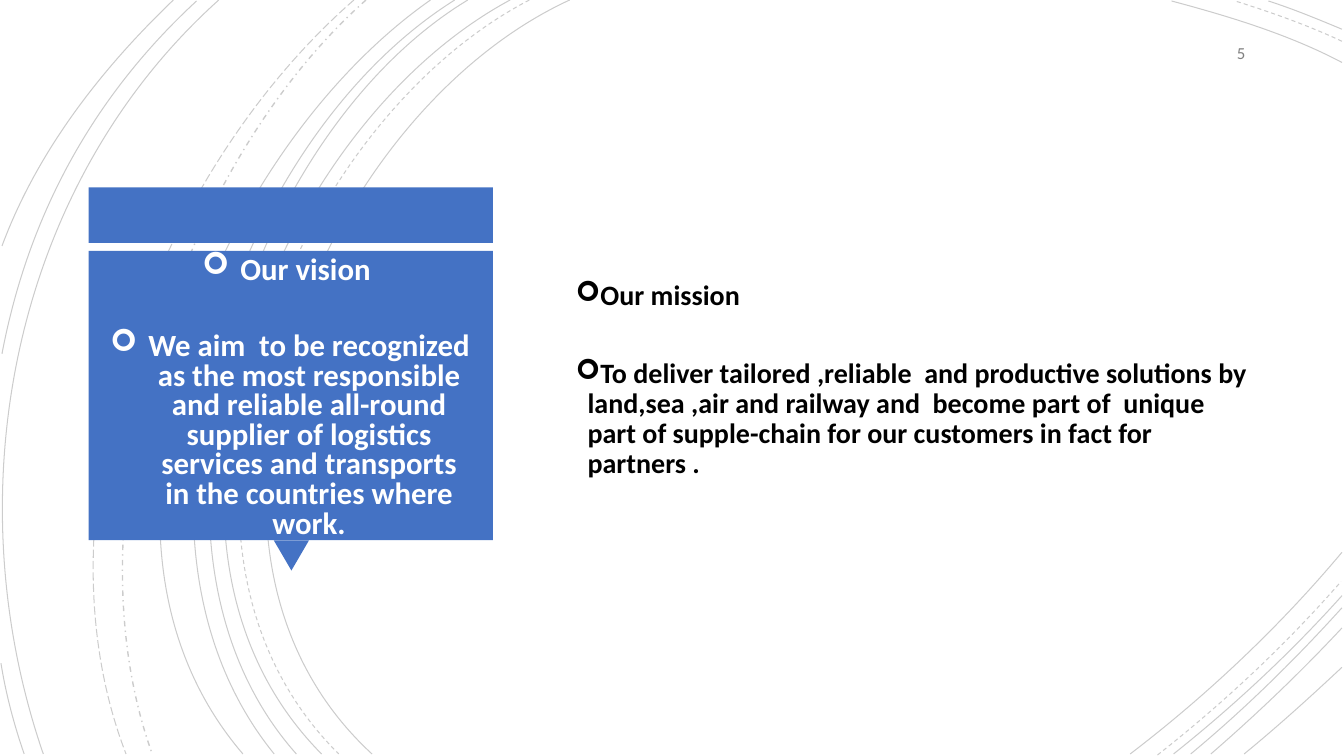
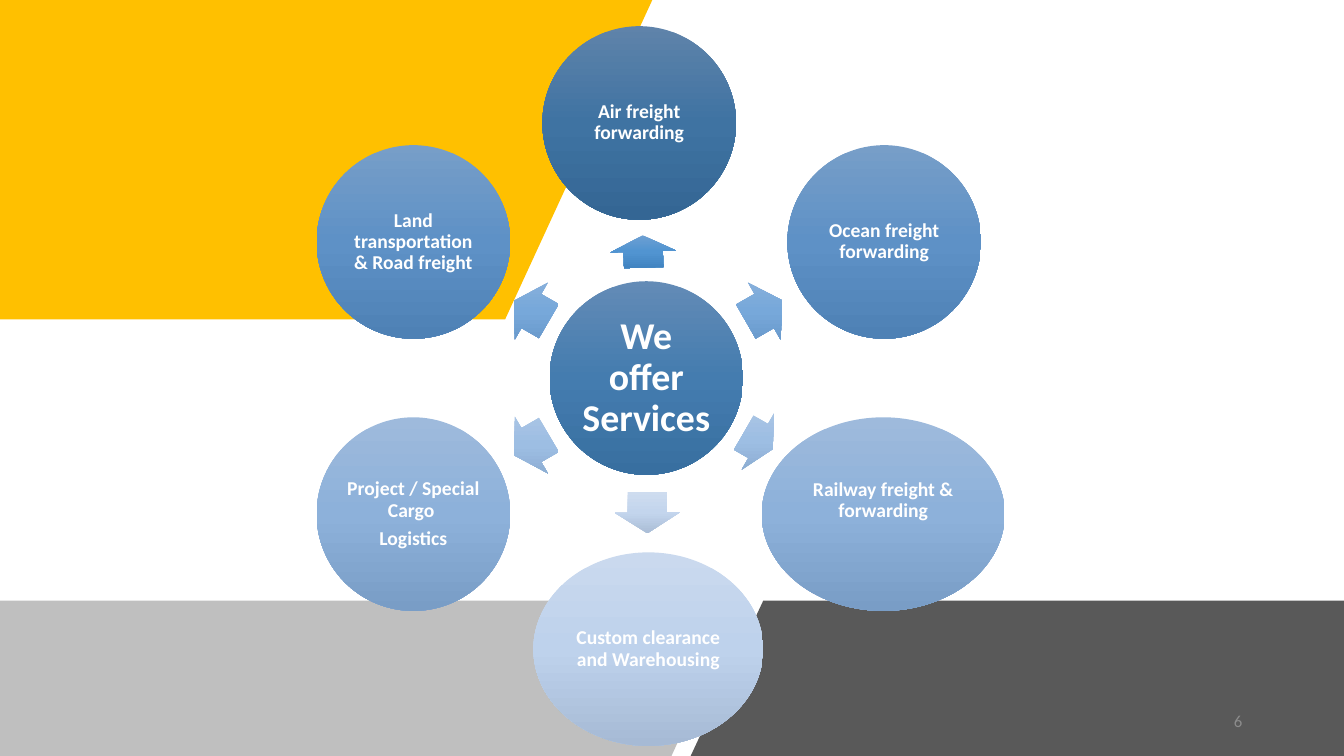
from pptx import Presentation
from pptx import util as u
from pptx.dml.color import RGBColor
from pptx.enum import dml, shapes, text
from pptx.oxml import parse_xml
from pptx.oxml.ns import qn
from lxml import etree

PX = 9144
W, H = 1333, 750
FONT = "Calibri"
BULLET_FONT = "Wingdings"
BLACK = RGBColor(0x00, 0x00, 0x00)
WHITE = RGBColor(0xFF, 0xFF, 0xFF)
GRAY = RGBColor(0x80, 0x80, 0x80)
LIGHT_GRAY = RGBColor(0x8C, 0x8C, 0x8C)
DARK_GRAY = RGBColor(0x59, 0x59, 0x59)
BLUE = RGBColor(0x44, 0x72, 0xC4)
GOLD = RGBColor(0xFF, 0xC0, 0x00)

HUB_TONES = "638BB6", "447CAF", "386FA0"
AIR_TONES = "5F83AA", "3F73A2", "346694"
UPPER_TONES = "779EC8", "5E91C6", "4E81B5"
LOWER_TONES = "9EBADC", "8DB1DA", "799DC6"
CUSTOM_TONES = "CAD9EE", "BED2EC", "A6BAD5"
AIR_ARROW = "6EA0D2", "5194D1", "4184C1"
UPPER_ARROW = "8CB2DB", "77A8DA", "6595C7"
LOWER_ARROW = "ADC6E5", "9DBEE3", "88A8CE"
CUSTOM_ARROW = "CEDCEF", "C3D5ED", "AABDD6"

SOLID = dml.MSO_LINE.SOLID
DASH = dml.MSO_LINE.DASH
DASH_DOT = dml.MSO_LINE.DASH_DOT
LONG_DASH = dml.MSO_LINE.LONG_DASH
CENTER = text.PP_ALIGN.CENTER
RIGHT = text.PP_ALIGN.RIGHT

ARCS = [
    (SOLID, (565, 0), (315, 115), (143, 540), (369, 748)),
    (SOLID, (1331, 62), (1278, 34), (1218, 16), (1162, 1)),
    (SOLID, (1121, 748), (1197, 690), (1269, 622), (1331, 548)),
    (DASH, (525, 0), (285, 125), (123, 537), (336, 748)),
    (DASH, (1331, 41), (1297, 25), (1260, 12), (1225, 1)),
    (DASH, (1148, 749), (1213, 698), (1275, 640), (1330, 577)),
    (SOLID, (506, 0), (270, 127), (110, 537), (319, 748)),
    (SOLID, (1331, 29), (1307, 19), (1283, 9), (1258, 1)),
    (SOLID, (1164, 748), (1223, 701), (1280, 648), (1331, 591)),
    (SOLID, (464, 0), (244, 133), (110, 541), (294, 748)),
    (SOLID, (1181, 748), (1234, 704), (1284, 655), (1331, 603)),
    (SOLID, (451, 0), (231, 138), (97, 533), (272, 748)),
    (SOLID, (1201, 748), (1246, 709), (1290, 667), (1331, 623)),
    (SOLID, (427, 0), (217, 147), (53, 529), (241, 748)),
    (SOLID, (1234, 748), (1267, 721), (1299, 692), (1331, 662)),
    (DASH_DOT, (363, 0), (176, 166), (65, 509), (151, 748)),
    (LONG_DASH, (351, 0), (157, 169), (29, 499), (125, 748)),
    (SOLID, (217, 0), (11, 185), (-46, 490), (43, 748)),
    (SOLID, (195, 1), (92, 96), (28, 214), (2, 351)),
    (SOLID, (1, 658), (6, 689), (14, 719), (24, 748)),
    (SOLID, (172, 0), (100, 69), (37, 150), (2, 244)),
]

SERVICES = [
    ("Air freight forwarding", 634, 122, 192, AIR_TONES, 0),
    ("Ocean freight forwarding", 877, 240, 192, UPPER_TONES, 0),
    ("Railway freight & forwarding", 876, 510, 241, LOWER_TONES, 26),
    ("Custom clearance and Warehousing", 643, 644, 228, CUSTOM_TONES, 0),
    ("Project / Special Cargo \nLogistics", 410, 510, 192, LOWER_TONES, 0),
    ("Land transportation & Road freight", 410, 240, 192, UPPER_TONES, 0),
]
ARROWS = [
    (638, 249, 32, 268.3, AIR_ARROW),
    (758, 308, 42, 330.2, UPPER_ARROW),
    (752, 437, 33, 29.8, LOWER_ARROW),
    (642, 508, 41, 89.6, CUSTOM_ARROW),
    (527, 441, 40, 149.8, LOWER_ARROW),
    (527, 308, 40, 210.2, UPPER_ARROW),
]


def px(*values):
    return [u.Emu(round(v * PX)) for v in values]


def add_bullet(p, margin, hanging):
    pPr = p._p.get_or_add_pPr()
    pPr.set("marL", str(margin))
    pPr.set("indent", str(hanging))
    etree.SubElement(pPr, qn("a:buFont")).set("typeface", BULLET_FONT)
    etree.SubElement(pPr, qn("a:buChar")).set("char", "➢")


def write(tf, content, size=12, color=BLACK, bold=False, align=None, line=None,
          after=0, bullet=None, insets=(10, 5, 10, 5)):
    tf.word_wrap = True
    tf.vertical_anchor = text.MSO_ANCHOR.MIDDLE
    tf.margin_left, tf.margin_top, tf.margin_right, tf.margin_bottom = px(*insets)
    for i, words in enumerate(content.split("\n")):
        p = tf.add_paragraph() if i else tf.paragraphs[0]
        p.alignment = align
        p.line_spacing = line
        p.space_after = u.Pt(after)
        if bullet:
            add_bullet(p, *px(*bullet))
        r = p.add_run()
        r.text = words
        r.font.name = FONT
        r.font.size = u.Pt(size)
        r.font.bold = bold
        r.font.color.rgb = color


def add_text(s, box, content, **fmt):
    write(s.shapes.add_textbox(*px(*box)).text_frame, content, **fmt)


def set_alpha(sp, percent):
    for clr in sp._element.spPr.iter(qn("a:srgbClr")):
        etree.SubElement(clr, qn("a:alpha")).set("val", str(percent * 1000))


def add_block(s, kind, box, color=None, tones=None, rotation=0):
    sp = s.shapes.add_shape(kind, *px(*box))
    sp.shadow.inherit = False
    sp.line.fill.background()
    sp.rotation = rotation
    if tones:
        set_gradient(sp, tones)
    else:
        sp.fill.solid()
        sp.fill.fore_color.rgb = color
    return sp


def set_gradient(sp, tones):
    sp.fill.gradient()
    sp.fill.gradient_angle = 270
    grad = sp._element.spPr.find(qn("a:gradFill"))
    grad.set("rotWithShape", "0")
    stops = "".join(
        f'<a:gs pos="{i * 50000}"><a:srgbClr val="{tone}"/></a:gs>'
        for i, tone in enumerate(tones))
    grad.replace(grad.find(qn("a:gsLst")), parse_xml(
        '<a:gsLst xmlns:a="http://schemas.openxmlformats.org/drawingml/2006/main">'
        f"{stops}</a:gsLst>"))


def add_outline(s, points, close):
    start, *rest = [px(*point) for point in points]
    fb = s.shapes.build_freeform(*start, scale=1.0)
    fb.add_line_segments(rest, close=close)
    sp = fb.convert_to_shape()
    sp.shadow.inherit = False
    return sp


def add_panel(s, points, color, alpha=100):
    sp = add_outline(s, points, True)
    sp.line.fill.background()
    sp.fill.solid()
    sp.fill.fore_color.rgb = color
    if alpha < 100:
        set_alpha(sp, alpha)


def bend(sp):
    segments = list(sp._element.spPr.iter(qn("a:lnTo")))
    outline = segments[0].getparent()
    curve = etree.SubElement(outline, qn("a:cubicBezTo"))
    for segment in segments:
        curve.append(segment[0])
        outline.remove(segment)


def add_arc(s, x, y, dash, ends):
    sp = add_outline(s, [(x + ex, y + ey) for ex, ey in ends], False)
    bend(sp)
    sp.fill.background()
    sp.line.color.rgb = BLACK
    sp.line.width = u.Pt(1 if dash == DASH_DOT else 0.75)
    sp.line.dash_style = dash
    set_alpha(sp, 20)


def add_arcs(s, x, y):
    for dash, *ends in ARCS:
        add_arc(s, x, y, dash, ends)


def add_page_number(s, box, number, color):
    add_text(s, box, number, color=color, align=RIGHT)


def add_vision(s, x, y, w):
    rect = shapes.MSO_SHAPE.RECTANGLE
    add_block(s, rect, (x, y, w, 55), BLUE)
    add_block(s, shapes.MSO_SHAPE.ISOSCELES_TRIANGLE,
              (x + w / 2 - 17, y + 350, 35, 30), BLUE, rotation=180)
    add_block(s, rect, (x, y + 63, w, 287), BLUE)
    add_text(s, (x + 11, y + 78, w - 24, 262),
             "Our vision \nWe aim  to be recognized as the most responsible and reliable "
             "all-round supplier of logistics services and transports in the countries "
             "where work.",
             size=22, color=WHITE, bold=True, align=CENTER, line=0.8, after=33.5,
             bullet=(38, -38))


def add_mission(s, box):
    add_text(s, box,
             "Our mission\nTo deliver tailored ,reliable  and productive solutions by "
             "land,sea ,air and railway and  become part of  unique part of supple-chain "
             "for our customers in fact for partners .",
             size=20, bold=True, line=0.9, after=34, bullet=(12, -38))


def add_panels(s, x, y, w, h):
    right, bottom, band = x + w, y + h, y + 596
    add_panel(s, [(x, band), (x + 737, band), (x + 666, bottom), (x, bottom)], GRAY, 50)
    add_panel(s, [(x + 832, y + 395), (x + 1162, y + 395), (x + 1162, bottom),
                  (x + 667, bottom)], WHITE)
    add_panel(s, [(x, y), (x + 647, y), (x + 501, y + 317), (x, y + 317)], GOLD)
    add_panel(s, [(x + 757, band), (right, band), (right, bottom), (x + 685, bottom)],
              DARK_GRAY)


def add_circle(s, label, cx, cy, w, tones, size=14, inset=2, lift=0, h=192):
    sp = add_block(s, shapes.MSO_SHAPE.OVAL, (cx - w / 2, cy - h / 2, w, h), tones=tones)
    write(sp.text_frame, label, size=size, color=WHITE, bold=True, align=CENTER,
          line=0.9, after=size * 0.35, insets=(inset, inset, inset, inset + lift))


def add_services(s, x, y):
    add_circle(s, "We offer Services", x + 641, y + 375, 192, HUB_TONES, size=27, inset=4)
    for cx, cy, w, rotation, tones in ARROWS:
        sp = add_block(s, shapes.MSO_SHAPE.RIGHT_ARROW,
                       (x + cx - w / 2, y + cy - 32, w, 65), tones=tones,
                       rotation=rotation)
        sp.adjustments[0] = 0.6
        sp.adjustments[1] = 0.5
    for label, cx, cy, w, tones, lift in SERVICES:
        add_circle(s, label, x + cx, y + cy, w, tones, lift=lift)


def main():
    prs = Presentation()
    prs.slide_width, prs.slide_height = px(W, H)
    blank = prs.slide_layouts[6]

    s = prs.slides.add_slide(blank)
    add_arcs(s, 0, 0)
    add_vision(s, 88, 186, 401)
    add_page_number(s, (1145, 35, 100, 35), "5", GRAY)
    add_mission(s, (561, 90, 687, 575))

    s = prs.slides.add_slide(blank)
    add_panels(s, 0, 0, W, H)
    add_services(s, 0, 0)
    add_page_number(s, (942, 695, 300, 40), "6", LIGHT_GRAY)

    prs.save("out.pptx")


if __name__ == "__main__":
    main()
